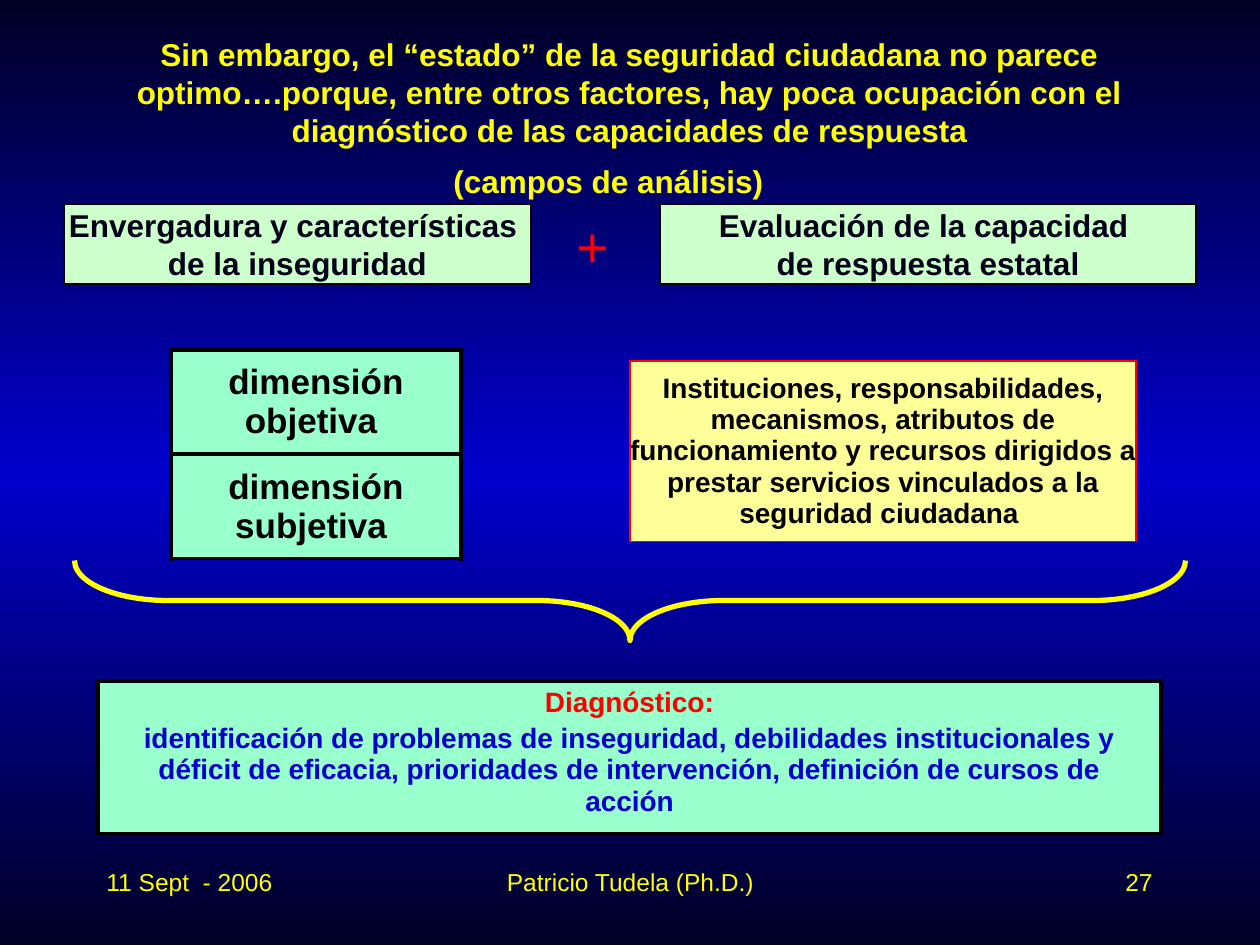
from copy import deepcopy

from lxml import etree
from pptx import Presentation
from pptx import util as u
from pptx.dml.color import RGBColor
from pptx.enum import shapes, text
from pptx.oxml.ns import qn

PX = u.Inches(1) / 126
CENTER, LEFT, RIGHT = text.PP_ALIGN.CENTER, text.PP_ALIGN.LEFT, text.PP_ALIGN.RIGHT
MIDDLE, TOP = text.MSO_ANCHOR.MIDDLE, text.MSO_ANCHOR.TOP

NIGHT = RGBColor(0x00, 0x00, 0x24)
BLUE = RGBColor(0x00, 0x00, 0xCC)
INK = RGBColor(0x00, 0x00, 0x18)
BLACK = RGBColor(0x00, 0x00, 0x00)
YELLOW = RGBColor(0xFF, 0xFF, 0x00)
RED = RGBColor(0xFF, 0x00, 0x00)
PALE_GREEN = RGBColor(0xCC, 0xFF, 0xCC)
MINT = RGBColor(0x99, 0xFF, 0xCC)
CREAM = RGBColor(0xFF, 0xFF, 0x99)


def px(*lengths):
    return [round(length * PX) for length in lengths]


def set_all(target, values):
    for name, value in values.items():
        setattr(target, name, value)


def write(frame, lines, size, color, bold=True, align=CENTER):
    """Put one paragraph per line into a text frame."""
    for index, line in enumerate(lines):
        paragraph = frame.paragraphs[0] if index == 0 else frame.add_paragraph()
        paragraph.alignment = align
        run = paragraph.add_run()
        run.text = line
        set_all(run.font, {"name": "Arial", "size": u.Pt(size), "bold": bold})
        run.font.color.rgb = color


def paint_background(slide):
    fill = slide.background.fill
    fill.gradient()
    fill.gradient_angle = 90
    stop_list = slide.element.find(".//" + qn("a:gsLst"))
    stop_list.append(deepcopy(stop_list[0]))
    for stop, position, color in zip(fill.gradient_stops, (0, 0.5, 1), (NIGHT, BLUE, NIGHT)):
        stop.position = position
        stop.color.rgb = color


def add_title(slide, box, line):
    title = slide.shapes.title
    set_all(title, dict(zip(("left", "top", "width", "height"), px(*box))))
    set_all(title.text_frame, {"word_wrap": True, "vertical_anchor": MIDDLE,
                               "auto_size": text.MSO_AUTO_SIZE.NONE})
    write(title.text_frame, [line], 18, YELLOW)


def add_label(slide, box, line, size, color=YELLOW, bold=False, align=LEFT,
              anchor=TOP, wrap=True):
    frame = slide.shapes.add_textbox(*px(*box)).text_frame
    set_all(frame, {"word_wrap": wrap, "vertical_anchor": anchor})
    write(frame, [line], size, color, bold, align)


def add_heading_box(slide, box, lines):
    shape = slide.shapes.add_shape(shapes.MSO_SHAPE.RECTANGLE, *px(*box))
    shape.shadow.inherit = False
    shape.fill.solid()
    shape.fill.fore_color.rgb = PALE_GREEN
    shape.line.color.rgb = BLACK
    shape.line.width = u.Pt(0.75)
    set_all(shape.text_frame, {"word_wrap": False, "vertical_anchor": MIDDLE})
    write(shape.text_frame, lines, 18, INK)


def add_brace(slide, box):
    brace = slide.shapes.add_shape(shapes.MSO_SHAPE.RIGHT_BRACE, *px(*box))
    brace.rotation = 90
    brace.adjustments[0] = 1.166
    brace.shadow.inherit = False
    brace.fill.background()
    brace.line.color.rgb = YELLOW
    brace.line.width = u.Pt(3)


def border_cell(cell, color, width):
    properties = cell._tc.get_or_add_tcPr()
    for index, side in enumerate(("a:lnL", "a:lnR", "a:lnT", "a:lnB")):
        line = etree.Element(qn(side), w=str(u.Pt(width)))
        fill = etree.SubElement(line, qn("a:solidFill"))
        etree.SubElement(fill, qn("a:srgbClr"), val=str(color))
        properties.insert(index, line)


def add_column_table(slide, left, top, width, row_heights, fill, border):
    """Add a one-column table and return its cells."""
    box = px(left, top, width, sum(row_heights))
    table = slide.shapes.add_table(len(row_heights), 1, *box).table
    set_all(table, {"first_row": False, "horz_banding": False})
    for row, height in zip(table.rows, px(*row_heights)):
        row.height = height
    cells = list(table.iter_cells())
    for cell in cells:
        cell.fill.solid()
        cell.fill.fore_color.rgb = fill
        border_cell(cell, *border)
    return cells


def main():
    presentation = Presentation()
    presentation.slide_width, presentation.slide_height = px(1260, 945)
    slide = presentation.slides.add_slide(presentation.slide_layouts[5])
    paint_background(slide)

    # Title and subtitle
    add_title(slide, (94, 46, 1071, 92),
              "Sin embargo, el “estado” de la seguridad ciudadana no parece "
              "optimo….porque, entre otros factores, hay poca ocupación con el "
              "diagnóstico de las capacidades de respuesta")
    add_label(slide, (441, 156, 335, 50), "(campos de análisis)", 18, bold=True, wrap=False)

    # The two fields of analysis
    add_heading_box(slide, (64, 204, 467, 80),
                    ["Envergadura y características ", "de la inseguridad"])
    add_heading_box(slide, (660, 204, 536, 80),
                    ["Evaluación de la capacidad ", "de respuesta estatal"])
    add_label(slide, (530, 224, 126, 42), "+", 32, RED, align=CENTER,
              anchor=MIDDLE, wrap=False)

    # Dimensions of insecurity
    dimensions = add_column_table(slide, 171, 350, 290, (104, 105), MINT, (BLACK, 2))
    for cell, name in zip(dimensions, ("objetiva ", "subjetiva ")):
        cell.vertical_anchor = MIDDLE
        write(cell.text_frame, ["dimensión", name], 20, BLACK)

    # State response capacity
    [capacity] = add_column_table(slide, 630, 361, 506, (179,), CREAM, (RED, 1))
    set_all(capacity, {"vertical_anchor": MIDDLE, "margin_left": 0, "margin_right": 0})
    write(capacity.text_frame,
          ["Instituciones, responsabilidades, mecanismos, atributos de "
           "funcionamiento y recursos dirigidos a prestar servicios vinculados "
           "a la seguridad ciudadana "], 16, BLACK)

    # Both fields lead to the diagnosis
    add_brace(slide, (590, 45, 80, 1111))
    [diagnosis] = add_column_table(slide, 98, 681, 1063, (143,), MINT, (BLACK, 2.25))
    write(diagnosis.text_frame,
          ["Diagnóstico:",
           "identificación de problemas de inseguridad, debilidades institucionales y "
           "déficit de eficacia, prioridades de intervención, definición de cursos de "
           "acción"], 16, BLUE)
    heading, detail = diagnosis.text_frame.paragraphs
    heading.runs[0].font.color.rgb = RED
    detail.space_before = u.Pt(3)

    # Footer
    for left, width, line, align in ((94, 262, "11 Sept  - 2006", LEFT),
                                     (431, 399, "Patricio Tudela (Ph.D.)", CENTER),
                                     (903, 262, "27", RIGHT)):
        add_label(slide, (left, 861, width, 63), line, 14, align=align)

    presentation.save("out.pptx")


if __name__ == "__main__":
    main()
